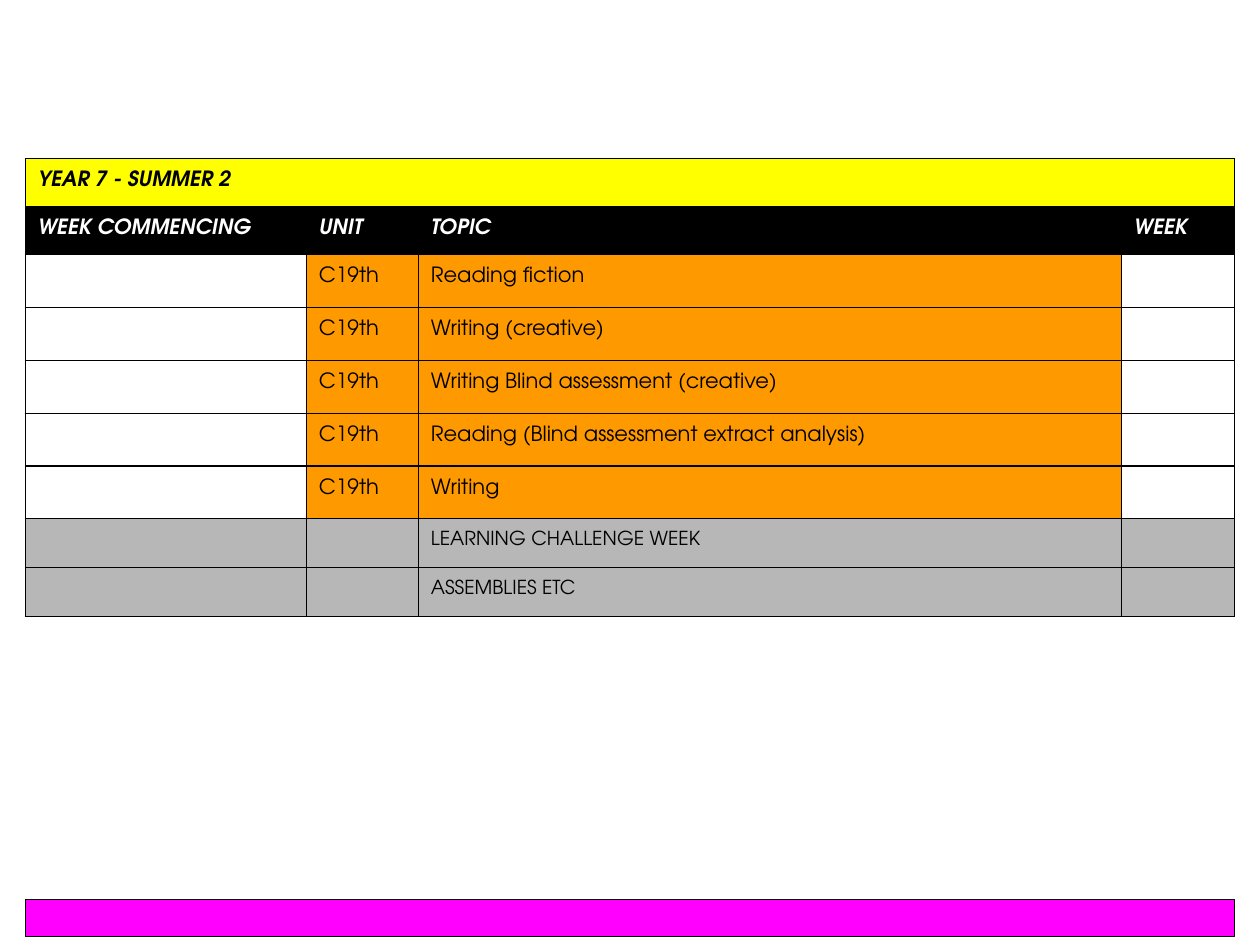
"""Build the weekly topic plan for Year 7, Summer 2."""
from dataclasses import dataclass

from lxml import etree
from pptx import Presentation
from pptx import util as u
from pptx.dml.color import RGBColor
from pptx.enum import shapes
from pptx.oxml.ns import qn


@dataclass(frozen=True)
class Theme:
    """Colours, type sizes and line width."""
    font: str = "TeX Gyre Adventor"
    ink: str = "000000"
    paper: str = "FFFFFF"
    title: str = "FFFF00"
    unit: str = "FF9900"
    closing: str = "B7B7B7"
    footer: str = "FF00FF"
    size: float = 12
    small: float = 11
    line: float = 0.75


THEME = Theme()
WIDTH, HEIGHT = u.Inches(10), u.Inches(7.5)
LEFT, SPAN = 0.02, 0.96
COLUMNS = (2.23, 0.89, 5.58, 0.9)
HEADINGS = ("WEEK COMMENCING", "UNIT", "TOPIC", "WEEK")
UNIT = "C19th"
TOPICS = (
    "Reading fiction",
    "Writing (creative)",
    "Writing Blind assessment (creative)",
    "Reading (Blind assessment extract analysis)",
    "Writing",
)
CLOSING = ("LEARNING CHALLENGE WEEK", "ASSEMBLIES ETC")


def paint(fill, colour):
    """Apply a solid fill, or none when there is no colour."""
    if colour:
        fill.solid()
        fill.fore_color.rgb = RGBColor.from_string(colour)
    else:
        fill.background()


def add_borders(cell):
    """Draw a thin line on all four sides of a cell."""
    properties = cell._tc.get_or_add_tcPr()
    for side in ("a:lnL", "a:lnR", "a:lnT", "a:lnB"):
        line = etree.SubElement(properties, qn(side), w=str(u.Pt(THEME.line)))
        solid = etree.SubElement(line, qn("a:solidFill"))
        etree.SubElement(solid, qn("a:srgbClr"), val=THEME.ink)


def fill_cell(cell, words, fill=None, colour=THEME.ink, size=THEME.size, strong=False):
    """Set the borders, fill, insets and words of a cell."""
    add_borders(cell)
    paint(cell.fill, fill)
    cell.margin_left = cell.margin_right = u.Inches(0.1)
    cell.margin_top = cell.margin_bottom = u.Inches(0.1)
    para = cell.text_frame.paragraphs[0]
    if words:
        span = para.add_run()
        span.text = words
        span.font.name = THEME.font
        span.font.size = u.Pt(size)
        span.font.bold = span.font.italic = strong
        span.font.color.rgb = RGBColor.from_string(colour)
    else:
        etree.SubElement(para._p, qn("a:endParaRPr"), sz=str(int(size * 100)))


def add_plan(page):
    """Add the plan table: title, headings, topic weeks and closing weeks."""
    heights = [0.38] * 2 + [0.42] * len(TOPICS) + [0.375] * len(CLOSING)
    frame = page.shapes.add_table(
        len(heights), len(COLUMNS), int(WIDTH * LEFT), u.Inches(1.26),
        int(WIDTH * SPAN), u.Inches(sum(heights)))
    table = frame.table
    for column, width in zip(table.columns, COLUMNS):
        column.width = u.Inches(width)
    for row, height in zip(table.rows, heights):
        row.height = u.Inches(height)

    rows = iter(table.rows)
    for cell, words in zip(next(rows).cells, ("YEAR 7 - SUMMER 2", "", "", "")):
        fill_cell(cell, words, THEME.title, strong=True)
    table.cell(0, 0).merge(table.cell(0, len(COLUMNS) - 1))
    for cell, words in zip(next(rows).cells, HEADINGS):
        fill_cell(cell, words, THEME.ink, THEME.paper, strong=True)
    for topic in TOPICS:
        for cell, words in zip(next(rows).cells, ("", UNIT, topic, "")):
            fill_cell(cell, words, THEME.unit if words else None)
    for event in CLOSING:
        for cell, words in zip(next(rows).cells, ("", "", event, "")):
            fill_cell(cell, words, THEME.closing, size=THEME.small)


def add_footer(page):
    """Add the coloured bar along the foot of the page."""
    bar = page.shapes.add_shape(
        shapes.MSO_SHAPE.RECTANGLE, int(WIDTH * LEFT), u.Inches(7.14),
        int(WIDTH * SPAN), u.Inches(0.29))
    bar.shadow.inherit = False
    paint(bar.fill, THEME.footer)
    paint(bar.line.fill, THEME.ink)
    bar.line.width = u.Pt(THEME.line)


def main():
    """Build and save the deck."""
    deck = Presentation()
    deck.slide_width, deck.slide_height = WIDTH, HEIGHT
    page = deck.slides.add_slide(deck.slide_layouts[6])
    add_plan(page)
    add_footer(page)
    deck.save("out.pptx")


if __name__ == "__main__":
    main()
